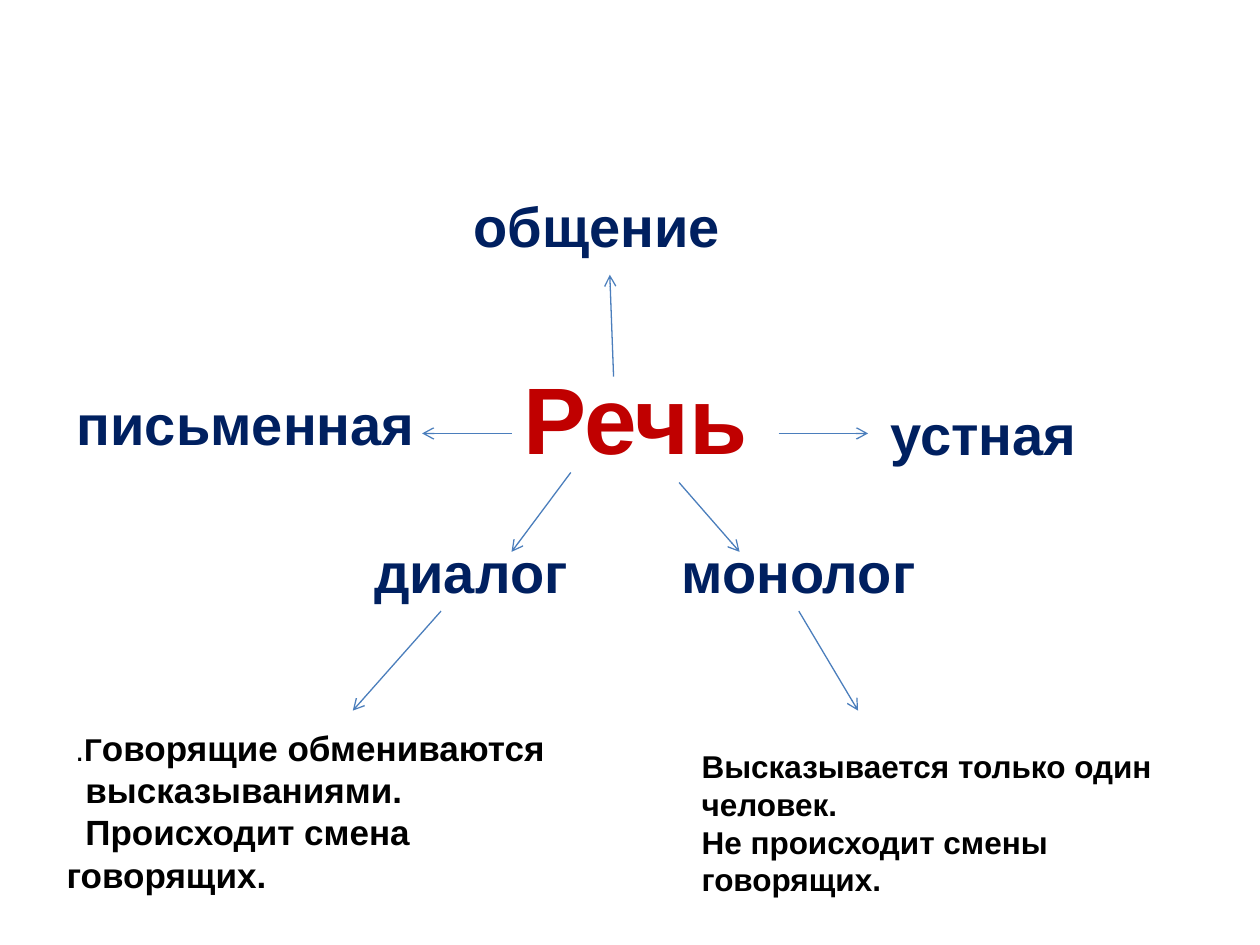
from pptx import Presentation
from pptx.dml.color import RGBColor
from pptx.enum.shapes import MSO_CONNECTOR as Connector
from pptx.enum.text import MSO_AUTO_SIZE as AutoSize
from pptx.oxml.ns import qn
from pptx.util import Inches, Pt
from lxml.etree import SubElement

COLORS = {"center": "C00000", "branch": "002060", "body": "000000", "arrow": "4B7EBC"}
FONT = "Arial"

# text, (left, top, width, height), size, color
LABELS = [
    ("Речь", (4.06, 2.81, 2, 1.01), 54, "center"),
    ("общение", (3.66, 1.47, 2.18, 0.64), 32, "branch"),
    ("письменная", (0.51, 3.04, 3.15, 0.64), 32, "branch"),
    ("устная", (6.97, 3.12, 2.56, 0.64), 32, "branch"),
    ("диалог", (2.87, 4.22, 2.05, 0.64), 32, "branch"),
    ("монолог", (5.31, 4.22, 3.02, 0.64), 32, "branch"),
]

# paragraphs: first-line indent, runs of (text, size, bold)
NOTES = [
    ((0.43, 5.72, 4.33, 1.45), [
        (0.07, [(".", 18, False), ("Г", 18, True), ("оворящие обмениваются", 20, True)]),
        (0.15, [("высказываниями.", 20, True)]),
        (0.15, [("Происходит смена говорящих.", 20, True)]),
    ]),
    ((5.47, 5.88, 3.94, 1.31), [
        (0, [("Высказывается только один человек.", 18, True)]),
        (0, [("Не происходит смены говорящих.", 18, True)]),
    ]),
]

ARROWS = [
    ((4.87, 2.99), (4.84, 2.18)),
    ((4.06, 3.44), (3.35, 3.44)),
    ((6.18, 3.44), (6.89, 3.44)),
    ((4.53, 3.75), (4.06, 4.38)),
    ((5.39, 3.83), (5.87, 4.38)),
    ((3.5, 4.85), (2.8, 5.64)),
    ((6.34, 4.85), (6.81, 5.64)),
]


def rgb(name):
    return RGBColor.from_string(COLORS[name])


def add_text(slide, box, paragraphs, color):
    frame = slide.shapes.add_textbox(*map(Inches, box)).text_frame
    frame.word_wrap = True
    frame.auto_size = AutoSize.SHAPE_TO_FIT_TEXT
    for index, (indent, runs) in enumerate(paragraphs):
        paragraph = frame.add_paragraph() if index else frame.paragraphs[0]
        if indent:
            paragraph._p.get_or_add_pPr().set("indent", str(Inches(indent)))
        paragraph.font.name = FONT
        paragraph.font.color.rgb = rgb(color)
        for text, size, bold in runs:
            run = paragraph.add_run()
            run.text = text
            run.font.size = Pt(size)
            run.font.bold = bold


def add_arrow(slide, start, end):
    arrow = slide.shapes.add_connector(Connector.STRAIGHT, *map(Inches, start + end))
    arrow.line.color.rgb = rgb("arrow")
    arrow.line.width = Pt(0.75)
    SubElement(arrow.line._get_or_add_ln(), qn("a:tailEnd"), type="arrow")
    SubElement(arrow._element.spPr, qn("a:effectLst"))


def main():
    presentation = Presentation()
    presentation.slide_width, presentation.slide_height = Inches(10), Inches(7.5)
    slide = presentation.slides.add_slide(presentation.slide_layouts[6])
    for start, end in ARROWS:
        add_arrow(slide, start, end)
    for text, box, size, color in LABELS:
        add_text(slide, box, [(0, [(text, size, True)])], color)
    for box, paragraphs in NOTES:
        add_text(slide, box, paragraphs, "body")
    presentation.save("out.pptx")


if __name__ == "__main__":
    main()
